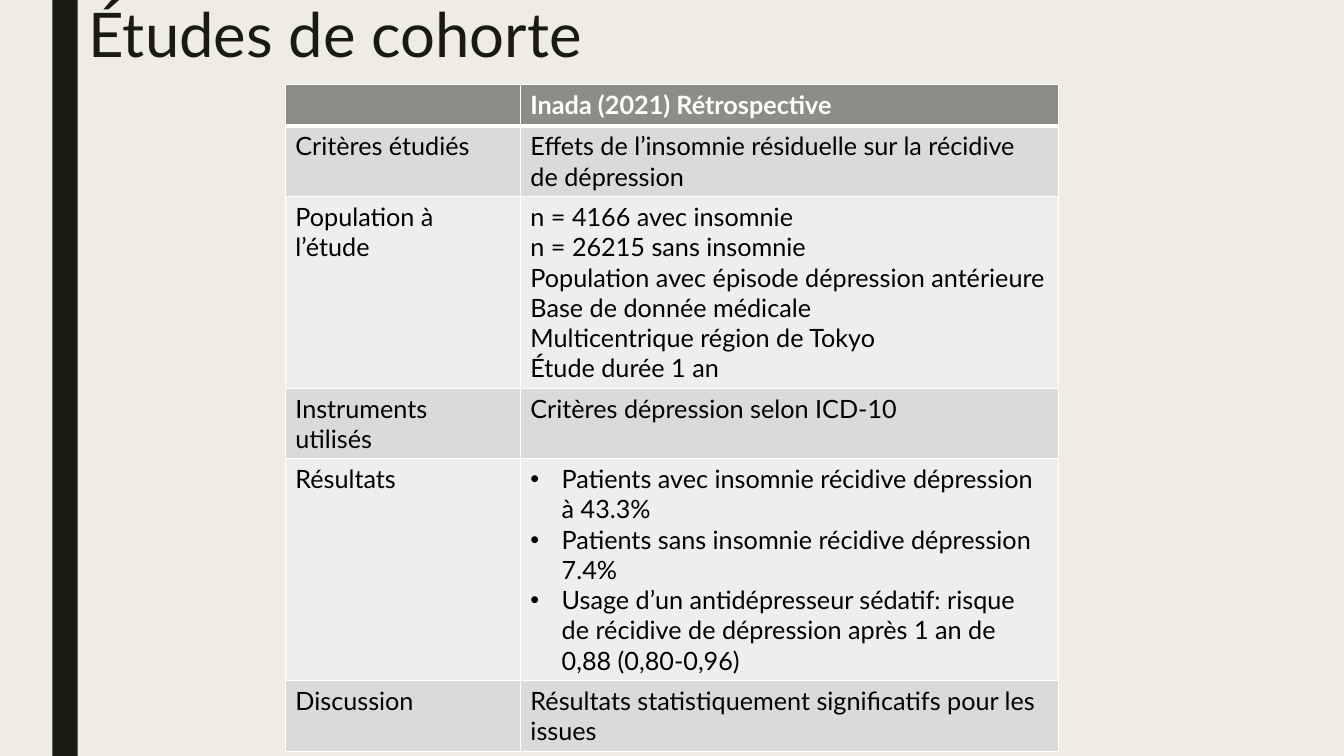
from lxml import etree
from pptx import Presentation
from pptx.dml.color import RGBColor
from pptx.enum.shapes import MSO_SHAPE
from pptx.enum.text import MSO_ANCHOR, PP_ALIGN
from pptx.oxml.ns import qn
from pptx.util import Inches, Pt

RECTANGLE = MSO_SHAPE.RECTANGLE
TOP = MSO_ANCHOR.TOP
LEFT = PP_ALIGN.LEFT

CREAM = RGBColor(0xEF, 0xED, 0xE3)
INK = RGBColor(0x19, 0x1B, 0x0E)
BLACK = RGBColor(0, 0, 0)
WHITE = RGBColor(0xFF, 0xFF, 0xFF)
HEADER_GREY = RGBColor(0x8C, 0x8D, 0x86)
BANDS = (RGBColor(0xDA, 0xDB, 0xD9), RGBColor(0xEE, 0xEE, 0xED))

FONT = "Lato"
SLIDE_W, SLIDE_H = Inches(13.33), Inches(7.5)
ROW_H = Inches(0.41)
COLUMN_SHARES = (0.304, 0.696)
BULLET_INDENT = Inches(0.31)

STUDY = [
    ("", ["Inada (2021) Rétrospective"]),
    ("Critères étudiés",
     ["Effets de l’insomnie résiduelle sur la récidive de dépression"]),
    ("Population à l’étude",
     ["n = 4166 avec insomnie",
      "n = 26215 sans insomnie",
      "Population avec épisode dépression antérieure",
      "Base de donnée médicale",
      "Multicentrique région de Tokyo",
      "Étude durée 1 an"]),
    ("Instruments utilisés", ["Critères dépression selon ICD-10"]),
    ("Résultats",
     ["Patients avec insomnie récidive dépression à 43.3%",
      "Patients sans insomnie récidive dépression 7.4%",
      "Usage d’un antidépresseur sédatif: risque de récidive de dépression "
      "après 1 an de 0,88 (0,80-0,96)"]),
    ("Discussion",
     ["Résultats statistiquement significatifs pour les issues"]),
]
BULLETED = "Résultats"


def write(frame, lines, size=18, color=BLACK, bold=False, spacing=None,
          bulleted=False):
    """Fill a text frame with one paragraph per line."""
    for index, line in enumerate(lines):
        paragraph = frame.paragraphs[0] if index == 0 else frame.add_paragraph()
        paragraph.alignment = LEFT
        if spacing:
            paragraph.line_spacing = spacing
        if bulleted:
            props = paragraph._p.get_or_add_pPr()
            props.set("marL", str(BULLET_INDENT))
            props.set("indent", str(-BULLET_INDENT))
            etree.SubElement(props, qn("a:buFont")).set("typeface", "Arial")
            etree.SubElement(props, qn("a:buChar")).set("char", "•")
        if line:
            run = paragraph.add_run()
            run.text = line
            run.font.name = FONT
            run.font.size = Pt(size)
            run.font.bold = bold
            run.font.color.rgb = color


def set_borders(cell, top=1, bottom=1):
    """Draw white borders, with widths in points."""
    props = cell._tc.get_or_add_tcPr()
    widths = {"a:lnL": 1, "a:lnR": 1, "a:lnT": top, "a:lnB": bottom}
    for index, (tag, width) in enumerate(widths.items()):
        line = props.makeelement(qn(tag), {"w": str(Pt(width))})
        fill = etree.SubElement(line, qn("a:solidFill"))
        etree.SubElement(fill, qn("a:srgbClr")).set("val", str(WHITE))
        props.insert(index, line)


def add_side_band(slide, left, top, width, height):
    band = slide.shapes.add_shape(RECTANGLE, left, top, width, height)
    band.shadow.inherit = False
    band.fill.solid()
    band.fill.fore_color.rgb = INK
    band.line.fill.background()


def place_title(slide, left, top, width, height):
    title = slide.shapes.title
    title.left, title.top, title.width, title.height = left, top, width, height
    title.text_frame.vertical_anchor = TOP
    title.text_frame.word_wrap = True
    write(title.text_frame, ["Études de cohorte"], size=44, color=INK,
          spacing=0.89)


def add_study_table(slide, left, top, width):
    table = slide.shapes.add_table(len(STUDY), len(COLUMN_SHARES), left, top,
                                   width, ROW_H * len(STUDY)).table
    for column, share in zip(table.columns, COLUMN_SHARES):
        column.width = int(width * share)
    for row, (criterion, findings) in enumerate(STUDY):
        table.rows[row].height = ROW_H
        header = row == 0
        for column, lines in enumerate(([criterion], findings)):
            cell = table.cell(row, column)
            cell.fill.solid()
            cell.fill.fore_color.rgb = (HEADER_GREY if header
                                        else BANDS[(row - 1) % 2])
            set_borders(cell, top=3 if row == 1 else 1,
                        bottom=3 if header else 1)
            write(cell.text_frame, lines, color=WHITE if header else BLACK,
                  bold=header,
                  bulleted=column == 1 and criterion == BULLETED)


def main():
    deck = Presentation()
    deck.slide_width, deck.slide_height = SLIDE_W, SLIDE_H
    slide = deck.slides.add_slide(deck.slide_layouts[5])
    slide.background.fill.solid()
    slide.background.fill.fore_color.rgb = CREAM

    # Dark band at the left edge
    add_side_band(slide, Inches(0.52), 0, Inches(0.25), SLIDE_H)
    # Heading
    place_title(slide, Inches(0.78), 0, Inches(11.5), Inches(0.97))
    # Study summary, centred on the slide
    table_width = Inches(7.67)
    add_study_table(slide, (SLIDE_W - table_width) // 2, Inches(0.84),
                    table_width)
    deck.save("out.pptx")


if __name__ == "__main__":
    main()
